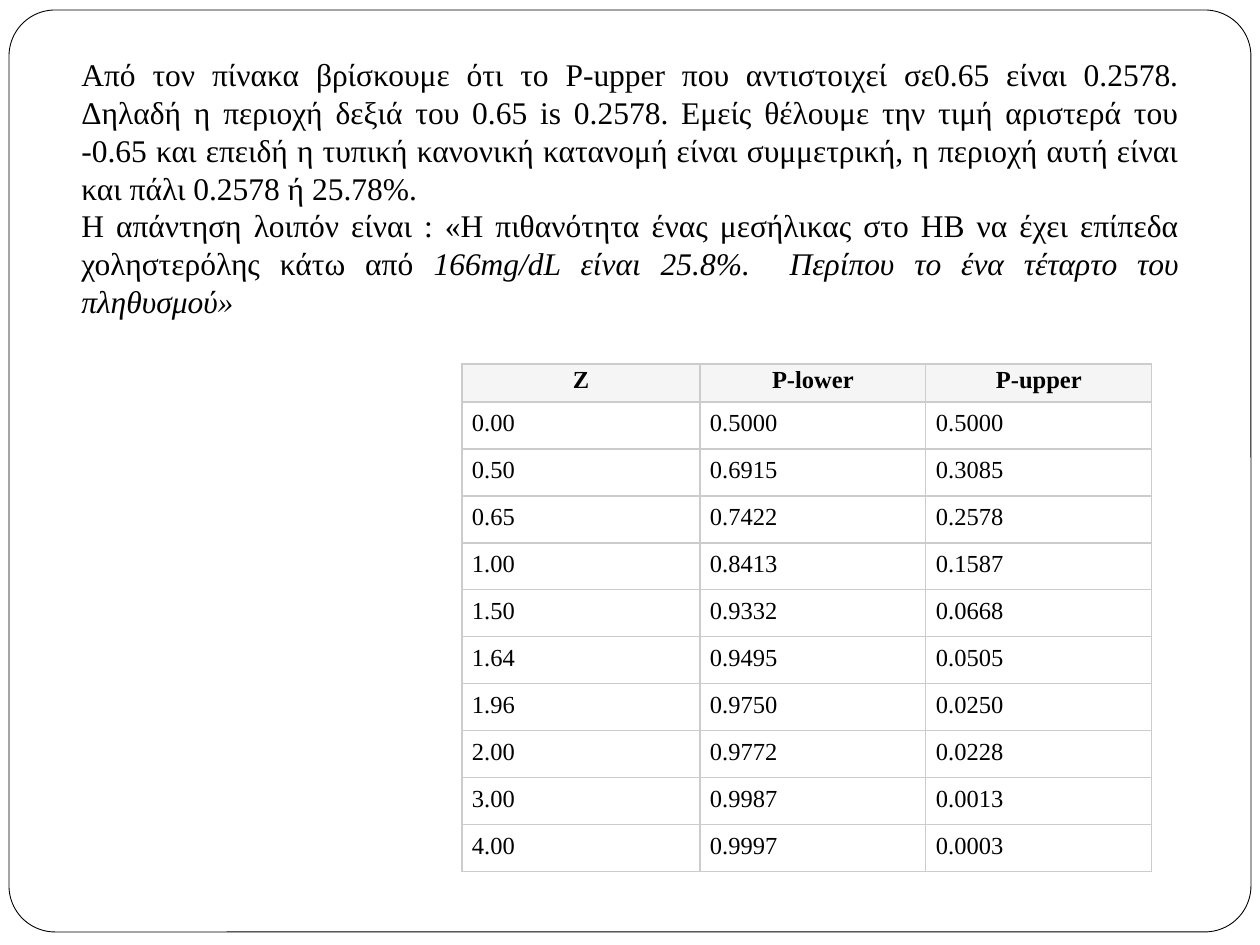
from typing import NamedTuple

from lxml import etree
from pptx import Presentation
from pptx import util as u
from pptx.dml.color import RGBColor
from pptx.enum import shapes, text
from pptx.oxml import ns

SCALE = 914400 / 126
FONT = "Times New Roman"
HUES = {"ink": "000000", "page": "FFFFFF", "head": "F5F5F5", "rule": "CCCCCC"}


class Box(NamedTuple):
    left: int
    top: int
    width: int
    height: int


class Run(NamedTuple):
    words: str
    italic: bool = False


class Row(NamedTuple):
    z: str
    lower: str
    upper: str


class Look(NamedTuple):
    fill: str
    bold: bool
    align: text.PP_ALIGN
    side: int
    ends: int


FRAME = Box(9, 10, 1242, 922)
NOTE = Box(69, 49, 1123, 318)
GRID = Box(462, 364, 690, 508)
WIDTHS = (238, 226, 226)
HEAD_H, ROW_H = 38, 47

HEAD = Look("head", True, text.PP_ALIGN.CENTER, 3, 3)
BODY = Look("page", False, text.PP_ALIGN.LEFT, 10, 8)

PARAS = (
    (Run("Από τον πίνακα βρίσκουμε ότι το P-upper που αντιστοιχεί σε0.65 είναι 0.2578. "
         "Δηλαδή η περιοχή δεξιά του 0.65 is 0.2578. Εμείς θέλουμε την τιμή αριστερά του "
         "-0.65 και επειδή η τυπική κανονική κατανομή είναι συμμετρική, η περιοχή αυτή "
         "είναι και πάλι 0.2578 ή 25.78%."),),
    (Run("Η απάντηση λοιπόν είναι : «Η πιθανότητα ένας μεσήλικας στο ΗΒ να έχει επίπεδα "
         "χοληστερόλης κάτω από "),
     Run("166mg/dL είναι 25.8%.  Περίπου το ένα τέταρτο του πληθυσμού»", True)),
)

ROWS = (
    Row("Z", "P-lower", "P-upper"),
    Row("0.00", "0.5000", "0.5000"),
    Row("0.50", "0.6915", "0.3085"),
    Row("0.65", "0.7422", "0.2578"),
    Row("1.00", "0.8413", "0.1587"),
    Row("1.50", "0.9332", "0.0668"),
    Row("1.64", "0.9495", "0.0505"),
    Row("1.96", "0.9750", "0.0250"),
    Row("2.00", "0.9772", "0.0228"),
    Row("3.00", "0.9987", "0.0013"),
    Row("4.00", "0.9997", "0.0003"),
)


def px(count: int) -> int:
    return round(count * SCALE)


def place(box: Box) -> list[int]:
    return [px(side) for side in box]


def hue(name: str) -> RGBColor:
    return RGBColor.from_string(HUES[name])


def apply(target, values: dict) -> None:
    for name, value in values.items():
        setattr(target, name, value)


def add_run(para, words: str, size: int, **style) -> None:
    run = para.add_run()
    run.text = words
    apply(run.font, {"name": FONT, "size": u.Pt(size), **style})
    run.font.color.rgb = hue("ink")


def add_frame(slide) -> None:
    frame = slide.shapes.add_shape(shapes.MSO_SHAPE.ROUNDED_RECTANGLE, *place(FRAME))
    frame.adjustments[0] = 0.05
    frame.shadow.inherit = False
    frame.fill.solid()
    frame.fill.fore_color.rgb = hue("page")
    frame.line.color.rgb = hue("ink")
    frame.line.width = u.Pt(0.5)


def add_note(slide) -> None:
    body = slide.shapes.add_textbox(*place(NOTE)).text_frame
    body.word_wrap = True
    for index, runs in enumerate(PARAS):
        para = body.add_paragraph() if index else body.paragraphs[0]
        para.alignment = text.PP_ALIGN.JUSTIFY
        for run in runs:
            add_run(para, run.words, 18, italic=run.italic)


def add_rules(cell) -> None:
    """Draw a thin border on all four sides of a cell."""
    props = cell._tc.get_or_add_tcPr()
    for side in ("a:lnL", "a:lnR", "a:lnT", "a:lnB"):
        line = etree.SubElement(props, ns.qn(side), w=str(u.Pt(0.75)))
        fill = etree.SubElement(line, ns.qn("a:solidFill"))
        etree.SubElement(fill, ns.qn("a:srgbClr"), val=HUES["rule"])


def fill_cell(cell, words: str, look: Look) -> None:
    add_rules(cell)
    cell.fill.solid()
    cell.fill.fore_color.rgb = hue(look.fill)
    side, ends = px(look.side), px(look.ends)
    apply(cell, {"margin_left": side, "margin_right": side,
                 "margin_top": ends, "margin_bottom": ends})
    para = cell.text_frame.paragraphs[0]
    para.alignment = look.align
    add_run(para, words, 14, bold=look.bold)


def add_grid(slide) -> None:
    table = slide.shapes.add_table(len(ROWS), len(WIDTHS), *place(GRID)).table
    apply(table, {"first_row": False, "horz_banding": False})
    for column, width in zip(table.columns, WIDTHS):
        column.width = px(width)
    for index, (line, row) in enumerate(zip(table.rows, ROWS)):
        line.height = px(ROW_H if index else HEAD_H)
        for cell, words in zip(line.cells, row):
            fill_cell(cell, words, BODY if index else HEAD)


def main() -> None:
    deck = Presentation()
    apply(deck, {"slide_width": px(1260), "slide_height": px(945)})
    slide = deck.slides.add_slide(deck.slide_layouts[6])
    add_frame(slide)
    add_note(slide)
    add_grid(slide)
    deck.save("out.pptx")


if __name__ == "__main__":
    main()
